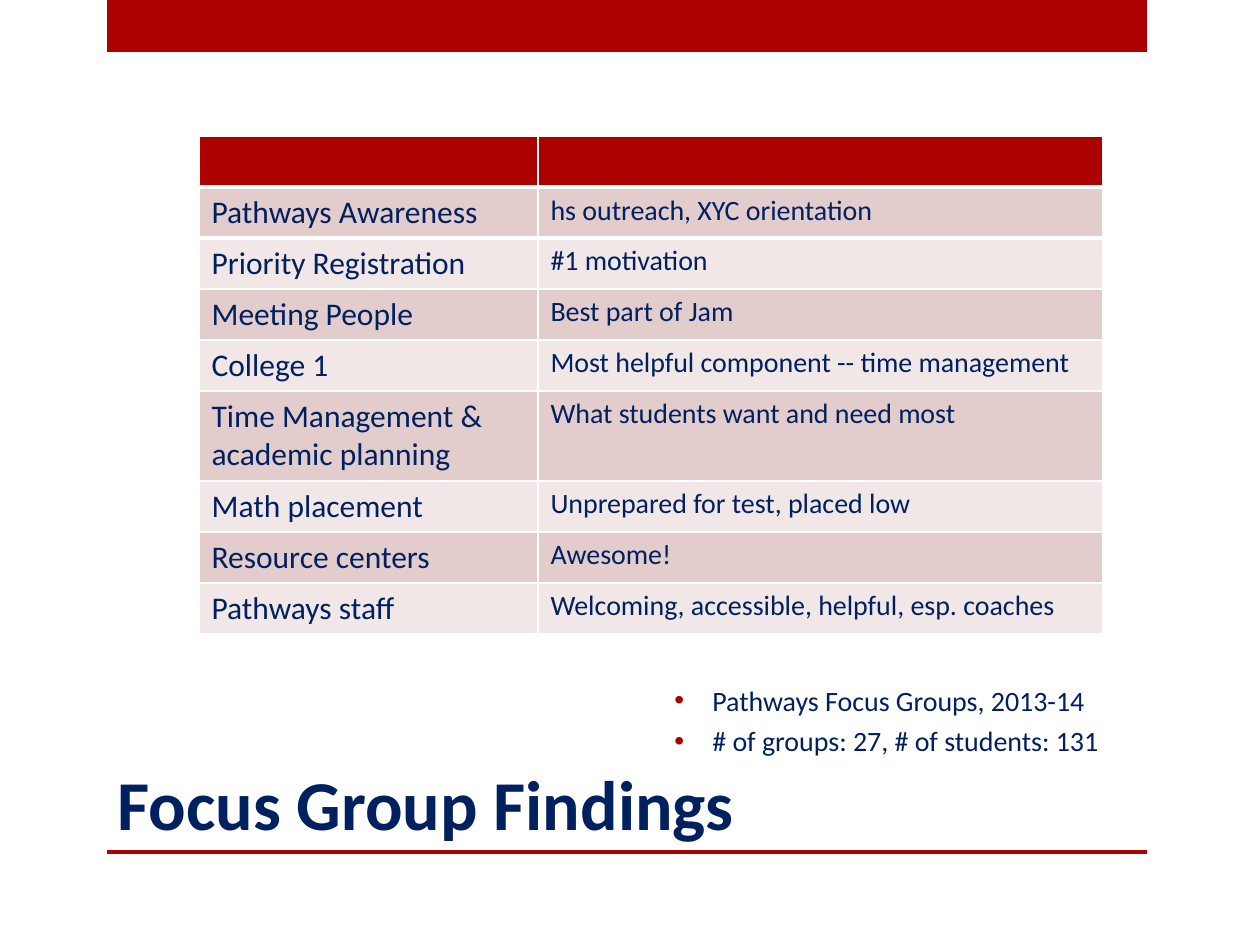
from lxml import etree
from pptx import Presentation
from pptx.dml.color import RGBColor
from pptx.enum.shapes import MSO_SHAPE
from pptx.enum.text import MSO_ANCHOR, MSO_AUTO_SIZE, PP_ALIGN
from pptx.oxml.ns import qn
from pptx.util import Pt

RECTANGLE = MSO_SHAPE.RECTANGLE
TOP, BOTTOM = MSO_ANCHOR.TOP, MSO_ANCHOR.BOTTOM
LEFT = PP_ALIGN.LEFT
NO_AUTOFIT = MSO_AUTO_SIZE.NONE

RED = RGBColor(0xAD, 0x01, 0x01)
NAVY = RGBColor(0x00, 0x20, 0x60)
ROSE = RGBColor(0xE3, 0xCC, 0xCC)
PALE_ROSE = RGBColor(0xF1, 0xE7, 0xE7)
WHITE = RGBColor(0xFF, 0xFF, 0xFF)

FONT = "Calibri"
PX_PER_INCH = 126
ROW_HEIGHT = 51
TALL_ROW_HEIGHT = 90

FINDINGS = [
    ("Pathways Awareness", "hs outreach, XYC orientation"),
    ("Priority Registration", "#1 motivation"),
    ("Meeting People", "Best part of Jam"),
    ("College 1", "Most helpful component -- time management"),
    ("Time Management & academic planning", "What students want and need most"),
    ("Math placement", "Unprepared for test, placed low"),
    ("Resource centers", "Awesome!"),
    ("Pathways staff", "Welcoming, accessible, helpful, esp. coaches"),
]
TALL_ROW = 5
NOTES = ["Pathways Focus Groups, 2013-14", "# of groups: 27, # of students: 131"]


def px(length):
    return round(length * 914400 / PX_PER_INCH)


def px_box(box):
    return [px(length) for length in box]


def add_span(para, text, size, bold=False):
    span = para.add_run()
    span.text = text
    span.font.name = FONT
    span.font.size = Pt(size)
    span.font.bold = bold
    span.font.color.rgb = NAVY


def add_bar(slide, box):
    bar = slide.shapes.add_shape(RECTANGLE, *px_box(box))
    bar.shadow.inherit = False
    bar.fill.solid()
    bar.fill.fore_color.rgb = RED
    bar.line.fill.background()


def place_title(slide, box, text):
    title = slide.shapes.title
    title.left, title.top, title.width, title.height = px_box(box)
    frame = title.text_frame
    frame.auto_size = NO_AUTOFIT
    frame.vertical_anchor = BOTTOM
    para = frame.paragraphs[0]
    para.alignment = LEFT
    add_span(para, text, 40, bold=True)


def add_bullet(para):
    properties = para._p.get_or_add_pPr()
    properties.set("marL", str(px(38)))
    properties.set("indent", str(px(-38)))
    colour = etree.SubElement(properties, qn("a:buClr"))
    etree.SubElement(colour, qn("a:srgbClr"), val=str(RED))
    etree.SubElement(properties, qn("a:buFont"), typeface="Arial")
    etree.SubElement(properties, qn("a:buChar"), char="•")


def add_notes(slide, box):
    frame = slide.shapes.add_textbox(*px_box(box)).text_frame
    frame.word_wrap = True
    frame.vertical_anchor = TOP
    for index, note in enumerate(NOTES):
        para = frame.add_paragraph() if index else frame.paragraphs[0]
        para.space_after = Pt(4)
        add_bullet(para)
        add_span(para, note, 16)


def set_border(cell, side, points):
    """Draw a white border; it has to precede the fill in the cell's XML."""
    properties = cell._tc.get_or_add_tcPr()
    line = etree.Element(qn(f"a:{side}"), w=str(Pt(points)))
    fill = etree.SubElement(line, qn("a:solidFill"))
    etree.SubElement(fill, qn("a:srgbClr"), val=str(WHITE))
    properties.insert(0, line)


def add_findings(slide, box):
    """The empty header row is red; the rows below it alternate."""
    row_count = len(FINDINGS) + 1
    table = slide.shapes.add_table(row_count, 2, *px_box(box)).table
    first_width = 339
    table.columns[0].width = px(first_width)
    table.columns[1].width = px(box[2] - first_width)
    for index, texts in enumerate([("", "")] + FINDINGS):
        height = TALL_ROW_HEIGHT if index == TALL_ROW else ROW_HEIGHT
        table.rows[index].height = px(height)
        colour = RED if index == 0 else (PALE_ROSE, ROSE)[index % 2]
        for column, (text, size) in enumerate(zip(texts, (18, 16))):
            cell = table.cell(index, column)
            cell.fill.solid()
            cell.fill.fore_color.rgb = colour
            if text:
                add_span(cell.text_frame.paragraphs[0], text, size)
            if index == 0:
                set_border(cell, "lnB", 3)
            elif index == 1:
                set_border(cell, "lnT", 3)


def main():
    deck = Presentation()
    deck.slide_width, deck.slide_height = px(1260), px(945)
    slide = deck.slides.add_slide(deck.slide_layouts[5])
    add_bar(slide, (107, 0, 1040, 52))
    add_bar(slide, (107, 850, 1040, 4))
    place_title(slide, (105, 630, 935, 221), "Focus Group Findings")
    add_notes(slide, (662, 677, 557, 88))
    add_findings(slide, (199, 136, 904, 498))
    deck.save("out.pptx")


if __name__ == "__main__":
    main()
